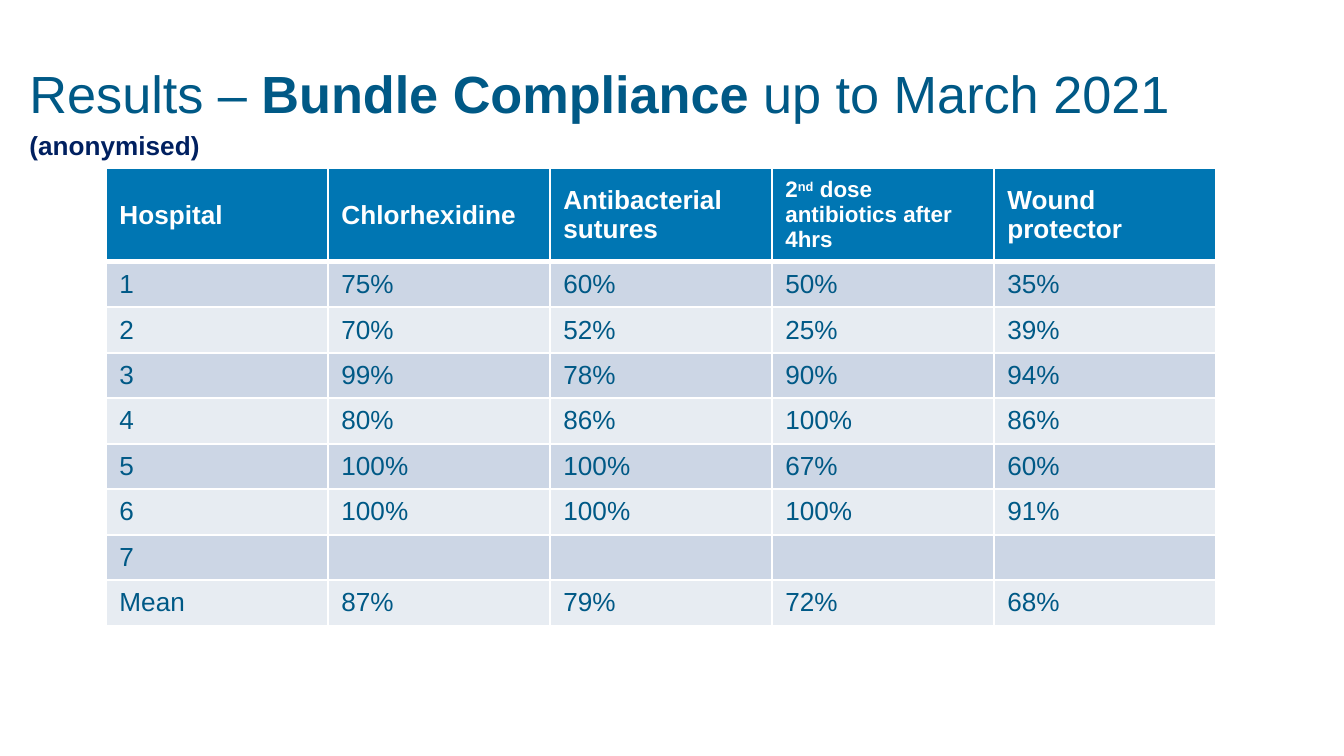
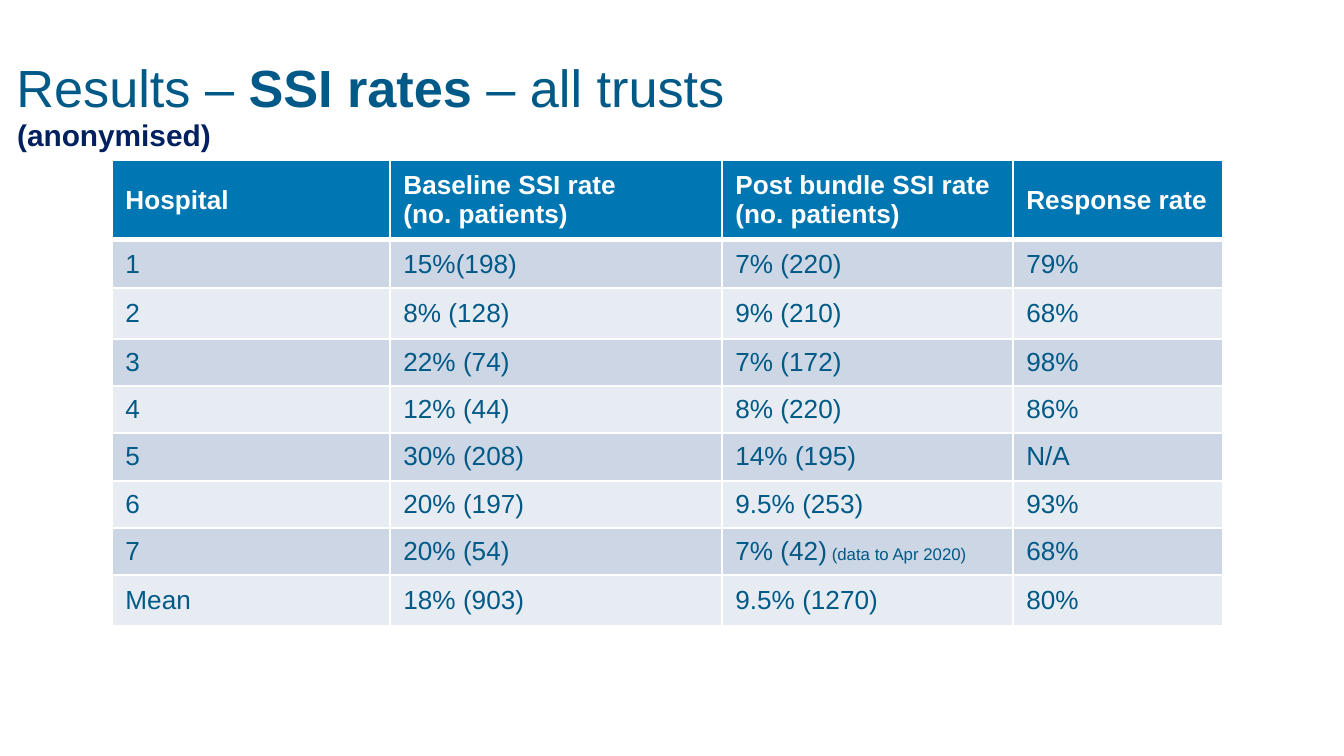
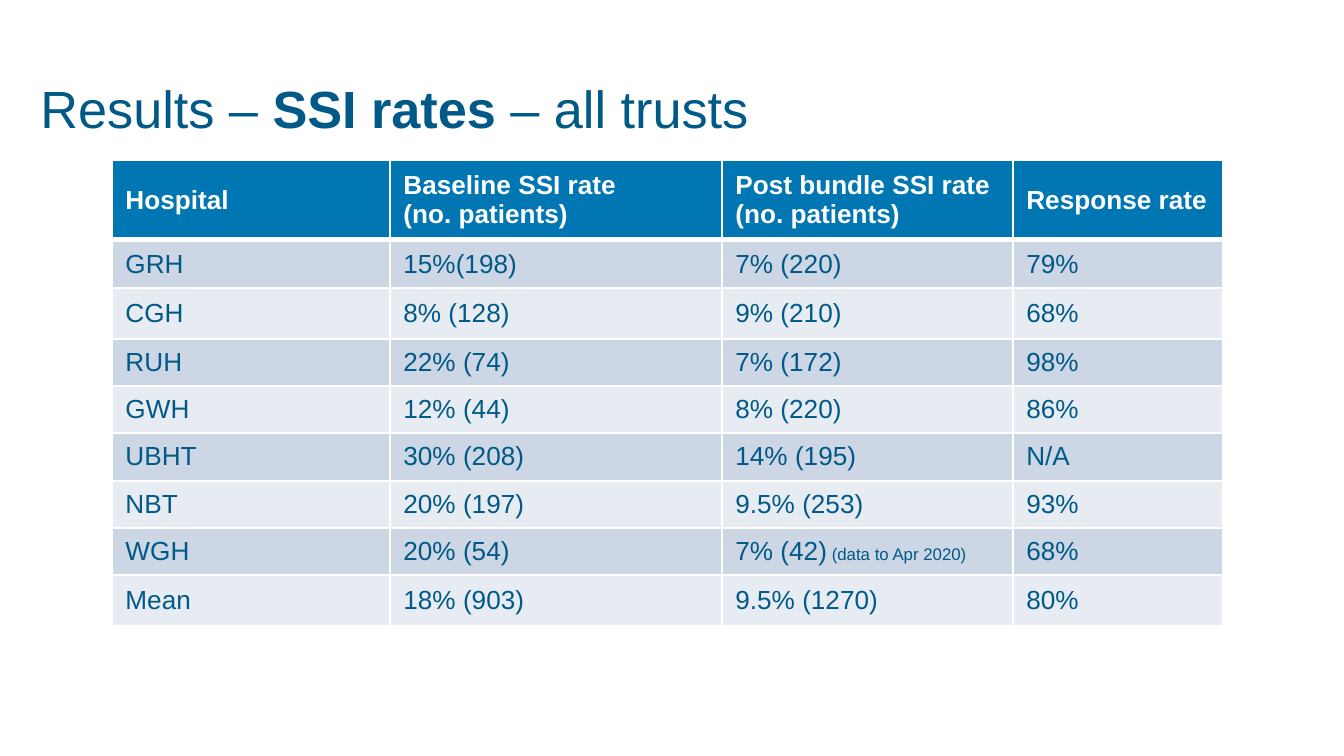
from dataclasses import dataclass

from lxml import etree
from pptx import Presentation
from pptx.dml.color import RGBColor
from pptx.enum.text import MSO_ANCHOR, MSO_AUTO_SIZE, PP_ALIGN
from pptx.oxml.ns import qn
from pptx.util import Pt

# Scale and shared style
SLIDE_W, SLIDE_H = 1344, 756
EMU_PER_PX = 9144000 / SLIDE_W
FONT = "Arial"
TITLE_PT, CELL_PT, SMALL_HEAD_PT, REMARK_PT = 28, 14, 12, 9
TITLE_BLUE = RGBColor(0x00, 0x59, 0x86)
NAVY = RGBColor(0x00, 0x20, 0x60)
HEADER_BLUE = RGBColor(0x00, 0x76, 0xB3)
BAND_DARK = RGBColor(0xCC, 0xD6, 0xE5)
BAND_LIGHT = RGBColor(0xE7, 0xEC, 0xF2)
WHITE = RGBColor(0xFF, 0xFF, 0xFF)
THIN, THICK = Pt(1), Pt(3)
TOP, MIDDLE = MSO_ANCHOR.TOP, MSO_ANCHOR.MIDDLE
NO_FIT, LEFT = MSO_AUTO_SIZE.NONE, PP_ALIGN.LEFT
TITLE_ONLY = 5
ANONYMISED = "(anonymised)"


@dataclass(frozen=True)
class Box:
    left: int
    top: int
    width: int
    height: int


@dataclass(frozen=True)
class Run:
    text: str
    bold: bool | None = None
    size: int | None = None
    superscript: bool = False


Cell = str | list[Run]


@dataclass(frozen=True)
class TableSpec:
    left: int
    top: int
    cols: list[int]
    rows: list[int]
    cells: list[list[Cell]]


# Table contents
COMPLIANCE = TableSpec(106, 168, [222] * 5, [94] + [45, 46] * 4, [
    ["Hospital", "Chlorhexidine", "Antibacterial sutures",
     [Run("2", size=SMALL_HEAD_PT),
      Run("nd", size=SMALL_HEAD_PT, superscript=True),
      Run(" dose antibiotics after 4hrs", size=SMALL_HEAD_PT)],
     "Wound protector"],
    ["1", "75%", "60%", "50%", "35%"],
    ["2", "70%", "52%", "25%", "39%"],
    ["3", "99%", "78%", "90%", "94%"],
    ["4", "80%", "86%", "100%", "86%"],
    ["5", "100%", "100%", "67%", "60%"],
    ["6", "100%", "100%", "100%", "91%"],
    ["7", "", "", "", ""],
    ["Mean", "87%", "79%", "72%", "68%"],
])
SSI_HEADER: list[Cell] = ["Hospital", "Baseline SSI rate\n(no. patients)",
                          "Post bundle SSI rate (no. patients)", "Response rate"]
SSI_RATES: list[list[Cell]] = [
    ["15%(198)", "7% (220)", "79%"],
    ["8% (128)", "9% (210)", "68%"],
    ["22% (74)", "7% (172)", "98%"],
    ["12% (44)", "8% (220)", "86%"],
    ["30% (208)", "14% (195)", "N/A"],
    ["20% (197)", "9.5% (253)", "93%"],
    ["20% (54)", [Run("7% (42)"), Run(" (data to Apr 2020)", size=REMARK_PT)], "68%"],
    ["18% (903)", "9.5% (1270)", "80%"],
]
NUMBERED = ["1", "2", "3", "4", "5", "6", "7", "Mean"]
NAMED = ["GRH", "CGH", "RUH", "GWH", "UBHT", "NBT", "WGH", "Mean"]
COMPLIANCE_TITLE = [Run("Results – "), Run("Bundle Compliance ", bold=True),
                    Run("up to March 2021")]
SSI_TITLE = [Run("Results – "), Run("SSI rates", bold=True), Run(" – all trusts")]


def px(n: int) -> int:
    return round(n * EMU_PER_PX)


def set_font(p, size: int, color: RGBColor, bold: bool = False) -> None:
    f = p.font
    f.name, f.size, f.bold = FONT, Pt(size), bold
    f.color.rgb = color


def add_runs(p, runs: list[Run]) -> None:
    for run in runs:
        r = p.add_run()
        r.text = run.text
        if run.bold is not None:
            r.font.bold = run.bold
        if run.size:
            r.font.size = Pt(run.size)
        if run.superscript:
            r.font._element.set("baseline", "30000")


def place(sp, box: Box) -> None:
    sp.left, sp.top = px(box.left), px(box.top)
    sp.width, sp.height = px(box.width), px(box.height)


def add_title(s, box: Box, runs: list[Run], subtitle: str = "") -> None:
    sp = s.shapes.title
    place(sp, box)
    tf = sp.text_frame
    tf.word_wrap, tf.auto_size, tf.vertical_anchor = True, NO_FIT, TOP
    p = tf.paragraphs[0]
    p.alignment = LEFT
    set_font(p, TITLE_PT, TITLE_BLUE)
    add_runs(p, runs)
    if subtitle:
        p = tf.add_paragraph()
        p.text, p.alignment, p.space_before = subtitle, LEFT, Pt(2.8)
        set_font(p, 14, NAVY, bold=True)


def add_label(s, box: Box, text: str) -> None:
    sp = s.shapes.add_textbox(0, 0, 0, 0)
    place(sp, box)
    tf = sp.text_frame
    tf.word_wrap = False
    p = tf.paragraphs[0]
    p.text = text
    set_font(p, 16, NAVY, bold=True)


def add_borders(cell, top: int, bottom: int) -> None:
    tc_pr = cell._tc.get_or_add_tcPr()
    for side, width in (("L", THIN), ("R", THIN), ("T", top), ("B", bottom)):
        ln = etree.SubElement(tc_pr, qn(f"a:ln{side}"), w=str(width))
        fill = etree.SubElement(ln, qn("a:solidFill"))
        etree.SubElement(fill, qn("a:srgbClr"), val=str(WHITE))


def fill_cell(cell, content: Cell, row: int) -> None:
    header = row == 0
    add_borders(cell, THICK if row == 1 else THIN, THICK if header else THIN)
    cell.fill.solid()
    cell.fill.fore_color.rgb = (
        HEADER_BLUE if header else BAND_DARK if row % 2 else BAND_LIGHT)
    cell.vertical_anchor = MIDDLE
    tf = cell.text_frame
    if isinstance(content, str):
        tf.text = content
    else:
        add_runs(tf.paragraphs[0], content)
    for p in tf.paragraphs:
        set_font(p, CELL_PT, WHITE if header else TITLE_BLUE, header)
        if not p.runs:  # keeps an empty row at its height
            etree.SubElement(p._p, qn("a:endParaRPr"), sz=str(CELL_PT * 100))


def add_grid(s, spec: TableSpec) -> None:
    table = s.shapes.add_table(
        len(spec.rows), len(spec.cols), px(spec.left), px(spec.top),
        px(sum(spec.cols)), px(sum(spec.rows))).table
    for column, width in zip(table.columns, spec.cols):
        column.width = px(width)
    for i, (height, contents) in enumerate(zip(spec.rows, spec.cells)):
        table.rows[i].height = px(height)
        for j, content in enumerate(contents):
            fill_cell(table.cell(i, j), content, i)


def ssi_table(hospitals: list[str]) -> TableSpec:
    body = [[name, *rates] for name, rates in zip(hospitals, SSI_RATES)]
    return TableSpec(112, 160, [278, 332, 291, 210],
                     [80, 48, 51, 47, 47, 48, 47, 47, 51], [SSI_HEADER, *body])


def main() -> None:
    prs = Presentation()
    prs.slide_width, prs.slide_height = px(SLIDE_W), px(SLIDE_H)
    layout = prs.slide_layouts[TITLE_ONLY]

    # Bundle compliance
    s = prs.slides.add_slide(layout)
    add_title(s, Box(16, 55, 1227, 85), COMPLIANCE_TITLE, ANONYMISED)
    add_grid(s, COMPLIANCE)

    # SSI rates, hospitals numbered
    s = prs.slides.add_slide(layout)
    add_title(s, Box(3, 49, 1063, 85), SSI_TITLE)
    add_grid(s, ssi_table(NUMBERED))
    add_label(s, Box(4, 110, 223, 50), ANONYMISED)

    # SSI rates, hospitals named
    s = prs.slides.add_slide(layout)
    add_title(s, Box(27, 70, 1063, 85), SSI_TITLE)
    add_grid(s, ssi_table(NAMED))

    prs.save("out.pptx")


if __name__ == "__main__":
    main()
